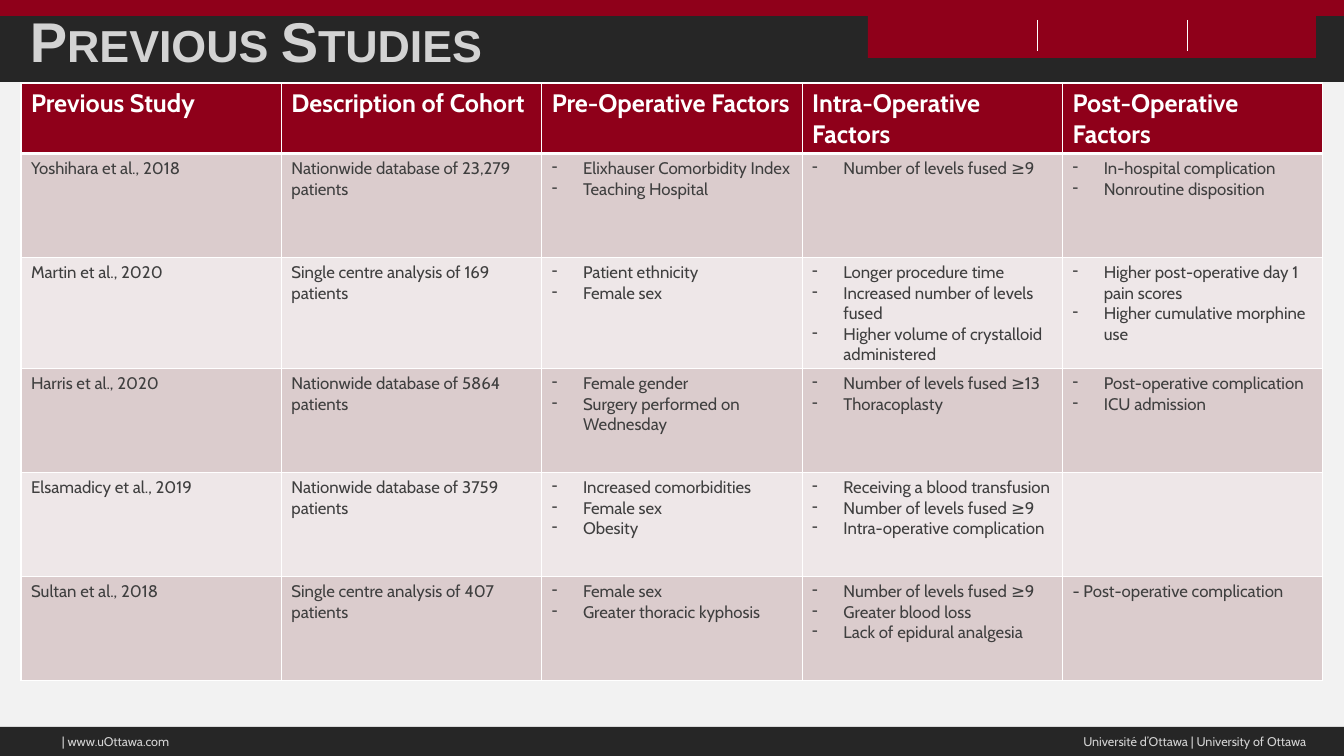
from dataclasses import dataclass

from lxml import etree
from pptx import Presentation, util as u
from pptx.dml.color import RGBColor
from pptx.enum import shapes, text
from pptx.oxml import ns

PX = u.Inches(7.5) / 756


@dataclass(frozen=True)
class Theme:
    garnet: str = "8F001A"
    charcoal: str = "262626"
    page: str = "F2F2F2"
    white: str = "FFFFFF"
    silver: str = "D3D3D3"
    body: str = "3F3F3F"
    bands: tuple = ("DBCCCD", "EEE7E8")
    title_font: str = "Arial"
    body_font: str = "Cabin"
    title_size: int = 40
    header_size: int = 18
    body_size: int = 12
    footer_size: int = 9


THEME = Theme()

HEADERS = ["Previous Study", "Description of Cohort", "Pre-Operative Factors",
           "Intra-Operative Factors", "Post-Operative Factors"]
STUDIES = [
    ("Yoshihara et al., 2018", "Nationwide database of 23,279 patients",
     ["Elixhauser Comorbidity Index", "Teaching Hospital"],
     ["Number of levels fused ≥9"],
     ["In-hospital complication", "Nonroutine disposition"]),
    ("Martin et al., 2020", "Single centre analysis of 169 patients",
     ["Patient ethnicity", "Female sex"],
     ["Longer procedure time", "Increased number of levels fused",
      "Higher volume of crystalloid administered"],
     ["Higher post-operative day 1 pain scores", "Higher cumulative morphine use"]),
    ("Harris et al., 2020", "Nationwide database of 5864 patients",
     ["Female gender", "Surgery performed on Wednesday"],
     ["Number of levels fused ≥13", "Thoracoplasty"],
     ["Post-operative complication", "ICU admission"]),
    ("Elsamadicy et al., 2019", "Nationwide database of 3759 patients",
     ["Increased comorbidities", "Female sex", "Obesity"],
     ["Receiving a blood transfusion", "Number of levels fused ≥9",
      "Intra-operative complication"],
     []),
    ("Sultan et al., 2018", "Single centre analysis of 407 patients",
     ["Female sex", "Greater thoracic kyphosis"],
     ["Number of levels fused ≥9", "Greater blood loss", "Lack of epidural analgesia"],
     "- Post-operative complication"),
]


def px(*lengths):
    return [round(length * PX) for length in lengths]


def color(value):
    return RGBColor.from_string(value)


def add_run(paragraph, words, size, tint, font=THEME.body_font, bold=False):
    run = paragraph.add_run()
    run.text = words
    run.font.name = font
    run.font.size = u.Pt(size)
    run.font.bold = bold
    run.font.color.rgb = color(tint)
    return run


def add_band(slide, box, tint):
    shape = slide.shapes.add_shape(shapes.MSO_SHAPE.RECTANGLE, *px(*box))
    shape.shadow.inherit = False
    shape.fill.solid()
    shape.fill.fore_color.rgb = color(tint)
    shape.line.fill.background()


def add_divider(slide, x, top, bottom):
    line = slide.shapes.add_connector(shapes.MSO_CONNECTOR.STRAIGHT, *px(x, top, x, bottom))
    line.line.color.rgb = color(THEME.white)
    line.line.width = u.Pt(0.5)
    etree.SubElement(line.element.spPr, ns.qn("a:effectLst"))


def add_text(slide, box, words, size, align=text.PP_ALIGN.LEFT,
             anchor=text.MSO_ANCHOR.TOP, wrap=True, **style):
    frame = slide.shapes.add_textbox(*px(*box)).text_frame
    frame.word_wrap = wrap
    frame.vertical_anchor = anchor
    paragraph = frame.paragraphs[0]
    paragraph.alignment = align
    return paragraph, add_run(paragraph, words, size, THEME.silver, **style)


def add_title(slide, words):
    paragraph, run = add_text(slide, (20, 16, 1289, 64), words, THEME.title_size,
                              anchor=text.MSO_ANCHOR.BOTTOM,
                              font=THEME.title_font, bold=True)
    paragraph.line_spacing = 0.9
    run.font._element.set("cap", "small")


def add_dash(paragraph):
    properties = paragraph._p.get_or_add_pPr()
    indent = u.Inches(0.31)
    properties.set("marL", str(indent))
    properties.set("indent", str(-indent))
    etree.SubElement(properties, ns.qn("a:buChar"), char="-")


def set_borders(cell, top, bottom):
    properties = cell._tc.get_or_add_tcPr()
    for side, points in (("L", 1), ("R", 1), ("T", top), ("B", bottom)):
        border = etree.SubElement(properties, ns.qn(f"a:ln{side}"), w=str(u.Pt(points)))
        fill = etree.SubElement(border, ns.qn("a:solidFill"))
        etree.SubElement(fill, ns.qn("a:srgbClr"), val=THEME.white)


def fill_cell(cell, content, row):
    header = row == 0
    set_borders(cell, 3 if row == 1 else 1, 3 if header else 1)
    cell.fill.solid()
    cell.fill.fore_color.rgb = color(THEME.garnet if header else THEME.bands[(row - 1) % 2])
    size = THEME.header_size if header else THEME.body_size
    tint = THEME.white if header else THEME.body
    dashed = isinstance(content, list)
    for index, words in enumerate(content if dashed else [content]):
        frame = cell.text_frame
        paragraph = frame.add_paragraph() if index else frame.paragraphs[0]
        if dashed:
            add_dash(paragraph)
        add_run(paragraph, words, size, tint, bold=header)


def add_study_table(slide):
    rows = [HEADERS, *STUDIES]
    table = slide.shapes.add_table(len(rows), len(HEADERS), *px(21, 83, 1302, 568)).table
    for row, contents in enumerate(rows):
        table.rows[row].height = px(104 if row else 48)[0]
        for column, content in enumerate(contents):
            fill_cell(table.cell(row, column), content, row)


def main():
    presentation = Presentation()
    presentation.slide_width, presentation.slide_height = px(1344, 756)
    slide = presentation.slides.add_slide(presentation.slide_layouts[6])
    for box, tint in [((0, 82, 1344, 674), THEME.page),
                      ((0, 0, 1344, 82), THEME.charcoal),
                      ((0, 0, 1344, 16), THEME.garnet),
                      ((868, 0, 448, 58), THEME.garnet),
                      ((0, 727, 1344, 29), THEME.charcoal)]:
        add_band(slide, box, tint)
    add_text(slide, (752, 729, 564, 25), "Université d’Ottawa | University of Ottawa",
             THEME.footer_size, text.PP_ALIGN.RIGHT, text.MSO_ANCHOR.BOTTOM)
    add_text(slide, (52, 729, 132, 25), "| www.uOttawa.com", THEME.footer_size, wrap=False)
    for x in (1037, 1187):
        add_divider(slide, x, 20, 51)
    add_title(slide, "Previous Studies")
    add_study_table(slide)
    presentation.save("out.pptx")


if __name__ == "__main__":
    main()
